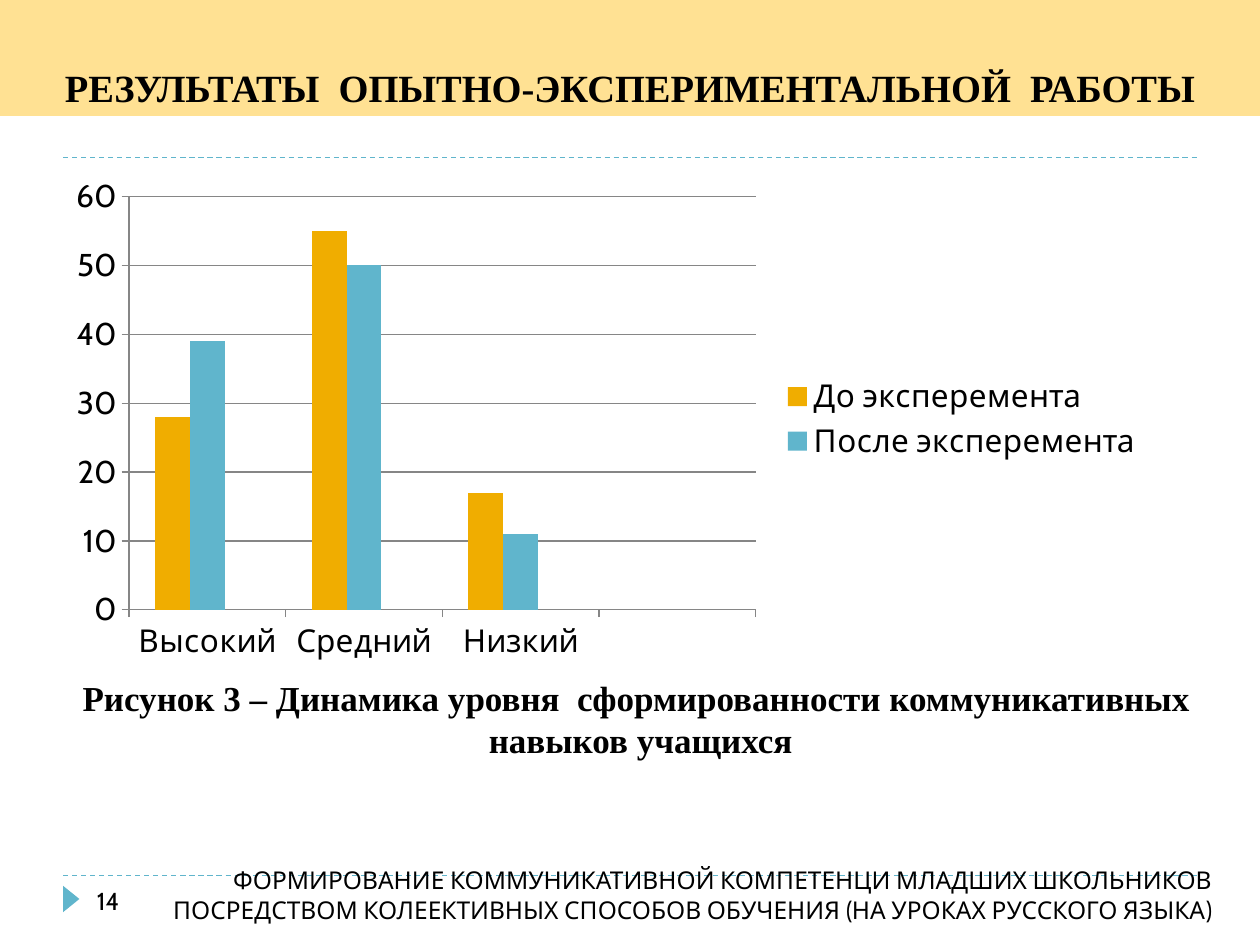
from dataclasses import dataclass

from lxml import etree
from pptx import Presentation
from pptx.chart.data import CategoryChartData
from pptx.dml.color import RGBColor
from pptx.enum.chart import XL_CHART_TYPE as ChartType, XL_LEGEND_POSITION as LegendPosition
from pptx.enum.chart import XL_TICK_MARK as TickMark
from pptx.enum.dml import MSO_LINE as Dash
from pptx.enum.shapes import MSO_CONNECTOR as Connector, MSO_SHAPE as Shape
from pptx.enum.text import MSO_ANCHOR as Anchor, PP_ALIGN as Align
from pptx.oxml import parse_xml
from pptx.oxml.ns import nsdecls, qn
from pptx.util import Inches, Pt


@dataclass(frozen=True)
class Theme:
    ink: RGBColor = RGBColor(0, 0, 0)
    banner: RGBColor = RGBColor.from_string("FFE193")
    gold: RGBColor = RGBColor.from_string("F0AD00")
    blue: RGBColor = RGBColor.from_string("60B5CC")
    rose: RGBColor = RGBColor.from_string("E66C7D")
    grid: RGBColor = RGBColor.from_string("868686")
    serif: str = "Times New Roman"
    sans: str = "Cabin"
    title_size: int = 22
    caption_size: int = 20
    chart_size: int = 18
    footer_size: int = 14


class SlideBuilder:
    def __init__(self, page, theme):
        self.page = page
        self.theme = theme

    def style(self, font, name, size, bold=False):
        font.name, font.size, font.bold = name, Pt(size), bold
        font.color.rgb = self.theme.ink

    def shape(self, kind, left, top, width, height, fill, rotation=0):
        box = self.page.shapes.add_shape(
            kind, Inches(left), Inches(top), Inches(width), Inches(height))
        box.shadow.inherit = False
        box.fill.solid()
        box.fill.fore_color.rgb = fill
        box.line.fill.background()
        box.rotation = rotation
        return box

    def fill_text(self, box, lines, name, size, bold=False, align=Align.LEFT,
                  anchor=Anchor.TOP, wrap=True):
        frame = box.text_frame
        frame.word_wrap = wrap
        frame.vertical_anchor = anchor
        frame.text = "\n".join(lines)
        for para in frame.paragraphs:
            para.alignment = align
            self.style(para.font, name, size, bold)

    def text(self, left, top, width, height, lines, name, size, **options):
        box = self.page.shapes.add_textbox(
            Inches(left), Inches(top), Inches(width), Inches(height))
        self.fill_text(box, lines, name, size, **options)

    def rule(self, top):
        line = self.page.shapes.add_connector(
            Connector.STRAIGHT, Inches(0.5), Inches(top), Inches(9.5), Inches(top))
        line.line.color.rgb = self.theme.blue
        line.line.width = Pt(0.75)
        line.line.dash_style = Dash.DASH
        etree.SubElement(line._element.spPr, qn("a:effectLst"))

    def column_chart(self, left, top, width, height, categories, series, hidden):
        data = CategoryChartData()
        data.categories = categories
        for name, values, _ in series:
            data.add_series(name, values)
        chart = self.page.shapes.add_chart(
            ChartType.COLUMN_CLUSTERED, Inches(left), Inches(top),
            Inches(width), Inches(height), data).chart
        self.style(chart.font, self.theme.sans, self.theme.chart_size)
        chart.has_title = False

        plot = chart.plots[0]
        plot.gap_width, plot.overlap = 150, 0
        plot.vary_by_categories = False
        for bars, (_, _, color) in zip(plot.series, series):
            bars.format.fill.solid()
            bars.format.fill.fore_color.rgb = color

        values_axis = chart.value_axis
        values_axis.minimum_scale, values_axis.maximum_scale = 0, 60
        values_axis.major_unit = 10
        values_axis.has_major_gridlines = True
        for axis in (chart.category_axis, values_axis):
            axis.major_tick_mark = TickMark.OUTSIDE
            axis.format.line.color.rgb = self.theme.grid
        values_axis.major_gridlines.format.line.color.rgb = self.theme.grid

        # The empty series has no legend entry
        chart.has_legend = True
        legend = chart.legend
        legend.position = LegendPosition.RIGHT
        legend.include_in_layout = False
        legend._element.find(qn("c:legendPos")).addnext(parse_xml(
            f'<c:legendEntry {nsdecls("c")}><c:idx val="{hidden}"/>'
            '<c:delete val="1"/></c:legendEntry>'))


def main():
    theme = Theme()
    deck = Presentation()
    deck.slide_width, deck.slide_height = Inches(10), Inches(7.5)
    builder = SlideBuilder(deck.slides.add_slide(deck.slide_layouts[6]), theme)

    # Dashed rules and page marker
    for top in (6.95, 1.25):
        builder.rule(top)
    builder.shape(Shape.ISOSCELES_TRIANGLE, 0.46, 7.07, 0.21, 0.13, theme.blue, 90)

    # Title banner
    banner = builder.shape(Shape.RECTANGLE, 0, 0, 10, 0.92, theme.banner)
    builder.fill_text(banner, ["РЕЗУЛЬТАТЫ  ОПЫТНО-ЭКСПЕРИМЕНТАЛЬНОЙ  РАБОТЫ"],
                      theme.serif, theme.title_size, bold=True,
                      align=Align.CENTER, anchor=Anchor.BOTTOM)

    # Footer and page number
    builder.text(0.98, 6.82, 8.74, 0.53,
                 ["ФОРМИРОВАНИЕ КОММУНИКАТИВНОЙ КОМПЕТЕНЦИ МЛАДШИХ ШКОЛЬНИКОВ "
                  "ПОСРЕДСТВОМ КОЛЕЕКТИВНЫХ СПОСОБОВ ОБУЧЕНИЯ (НА УРОКАХ РУССКОГО ЯЗЫКА)"],
                 theme.sans, theme.footer_size, align=Align.RIGHT)
    builder.text(0.67, 6.95, 0.55, 0.4, ["14"], theme.sans, theme.footer_size,
                 anchor=Anchor.MIDDLE)

    # Results chart, with a free fourth category
    builder.column_chart(
        0.43, 1.33, 8.74, 3.99,
        ["Высокий", "Средний", "Низкий", ""],
        [("До эксперемента", (28, 55, 17, None), theme.gold),
         ("После эксперемента", (39, 50, 11, None), theme.blue),
         ("Series 3", (None,) * 4, theme.rose)],
        hidden=2)

    # Caption
    builder.text(0.46, 5.32, 9.25, 0.77,
                 ["Рисунок 3 – Динамика уровня  сформированности коммуникативных ",
                  "навыков учащихся"],
                 theme.serif, theme.caption_size, bold=True,
                 align=Align.CENTER, wrap=False)

    deck.save("out.pptx")


if __name__ == "__main__":
    main()
